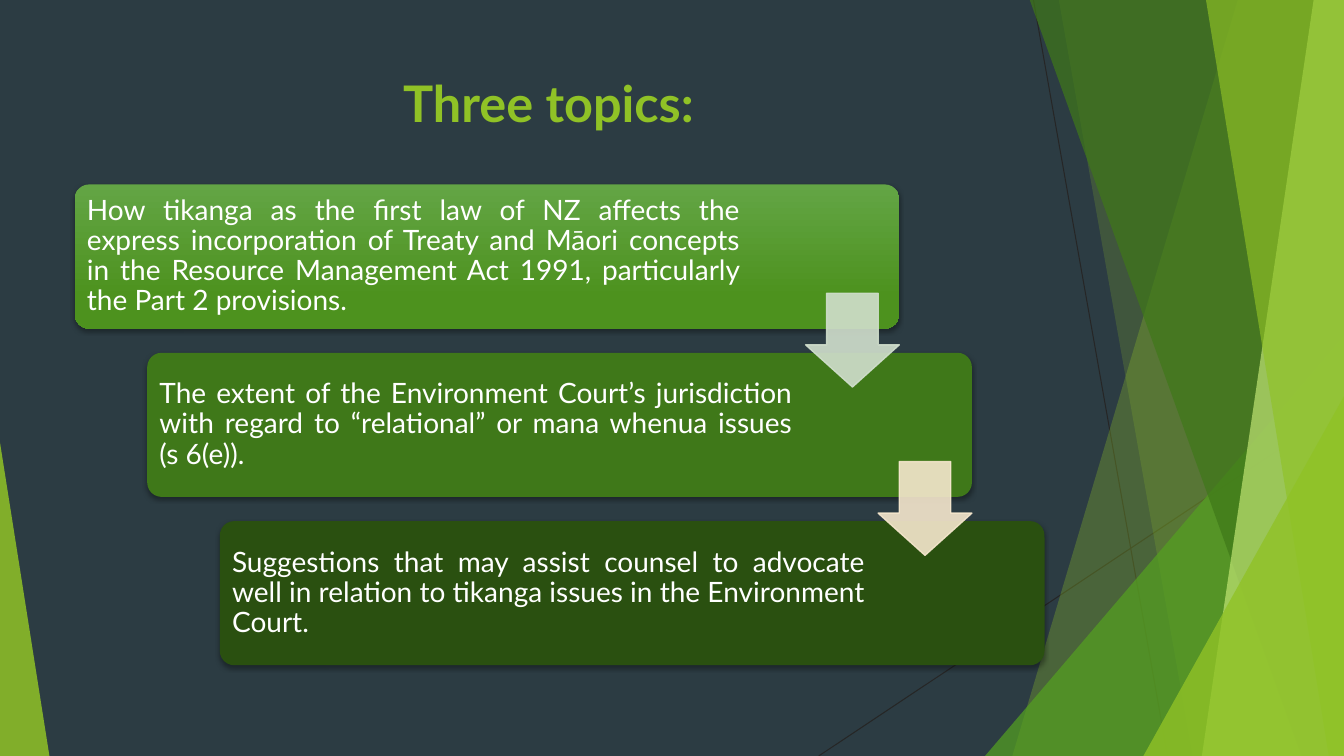
"""Builds the slide of three stepped topics."""
from dataclasses import dataclass

from lxml import etree
from pptx import Presentation
from pptx import util as u
from pptx.dml import color
from pptx.enum import shapes, text
from pptx.oxml import ns


@dataclass(frozen=True)
class Theme:
    """Colours, font and type sizes."""
    back: str = "2C3C43"
    ink: str = "FFFFFF"
    rule: str = "262626"
    lime: str = "90C226"
    pale: str = "C0E474"
    leaf: str = "54A021"
    moss: str = "3F7819"
    pine: str = "2A5010"
    glow: tuple = ("63A545", "4D921E")
    mint: str = "D1DFCD"
    sand: str = "F5E7CD"
    font: str = "Lato"
    head: int = 36
    body: int = 20


def rgb(code):
    """Return a colour from its hex code."""
    return color.RGBColor.from_string(code)


class Deck:
    """Holds the theme and the current slide."""

    def __init__(self, theme):
        """Open a title-only slide."""
        self.theme = theme
        self.prs = Presentation()
        self.wide, self.high = 13.33, 7.5
        self.prs.slide_width = u.Inches(self.wide)
        self.prs.slide_height = u.Inches(self.high)
        self.slide = self.prs.slides.add_slide(self.prs.slide_layouts[5])
        self.items = self.slide.shapes
        fill = self.slide.background.fill
        fill.solid()
        fill.fore_color.rgb = rgb(theme.back)

    def paint(self, shape, code, alpha=100):
        """Give a shape a flat, possibly clear fill and no line."""
        shape.shadow.inherit = False
        shape.fill.solid()
        shape.fill.fore_color.rgb = rgb(code)
        shape.line.fill.background()
        self.fade(shape, alpha)

    def fade(self, shape, alpha):
        """Set the opacity of every colour of a shape."""
        if alpha < 100:
            for node in shape.element.spPr.iter(ns.qn("a:srgbClr")):
                for old in node.findall(ns.qn("a:alpha")):
                    node.remove(old)
                etree.SubElement(node, ns.qn("a:alpha"), val=str(alpha * 1000))

    def shape(self, kind, box, adjust):
        """Add a preset shape with its adjustments."""
        shape = self.items.add_shape(kind, *map(u.Inches, box))
        for i, value in enumerate(adjust):
            shape.adjustments[i] = value
        return shape

    def line(self, *ends):
        """Add a thin straight line."""
        line = self.items.add_connector(
            shapes.MSO_CONNECTOR.STRAIGHT, *map(u.Inches, ends))
        line.line.color.rgb = rgb(self.theme.rule)
        line.line.width = u.Pt(0.75)
        etree.SubElement(line.element.spPr, ns.qn("a:effectLst"))

    def facet(self, top, foot, code, alpha):
        """Add a slanted panel that reaches the right edge."""
        rim = -0.01
        spots = [(self.wide, rim), (self.wide, self.high), (foot, self.high)]
        pen = self.items.build_freeform(u.Inches(top), u.Inches(rim), scale=1.0)
        pen.add_line_segments([(u.Inches(x), u.Inches(y)) for x, y in spots])
        self.paint(pen.convert_to_shape(), code, alpha)

    def wedge(self, left, top, wide, peak, code, alpha):
        """Add a triangle that stands on the lower edge."""
        box = left, top, wide, self.high - top
        shape = self.shape(shapes.MSO_SHAPE.ISOSCELES_TRIANGLE, box, [peak])
        self.paint(shape, code, alpha)

    def style(self, para, size, code, align, bold=False):
        """Format a paragraph and its runs."""
        para.alignment = align
        for run in para.runs:
            run.font.name = self.theme.font
            run.font.size = u.Pt(size)
            run.font.bold = bold
            run.font.color.rgb = rgb(code)

    def title(self, words, box):
        """Place and format the title."""
        head = self.items.title
        head.left, head.top, head.width, head.height = map(u.Inches, box)
        frame = head.text_frame
        frame.text = words
        frame.vertical_anchor = text.MSO_ANCHOR.TOP
        self.style(frame.paragraphs[0], self.theme.head, self.theme.lime,
                   text.PP_ALIGN.CENTER, True)

    def card(self, box, words, inset, fill):
        """Add a rounded card with a soft shadow and justified text."""
        card = self.shape(shapes.MSO_SHAPE.ROUNDED_RECTANGLE, box, [0.1])
        if isinstance(fill, tuple):
            self.paint(card, fill[0])
            card.fill.gradient()
            card.fill.gradient_angle = 270
            for stop, code, spot in zip(card.fill.gradient_stops, fill, (0, 0.78)):
                stop.color.rgb = rgb(code)
                stop.position = spot
        else:
            self.paint(card, fill)
        glow = etree.SubElement(
            card.element.spPr.find(ns.qn("a:effectLst")), ns.qn("a:outerShdw"),
            blurRad=str(u.Pt(3)), dist=str(u.Pt(2)), dir="5400000", rotWithShape="0")
        tint = etree.SubElement(glow, ns.qn("a:srgbClr"), val="000000")
        etree.SubElement(tint, ns.qn("a:alpha"), val="35000")
        frame = card.text_frame
        frame.word_wrap = True
        frame.vertical_anchor = text.MSO_ANCHOR.MIDDLE
        frame.margin_left = frame.margin_top = frame.margin_bottom = u.Inches(0.08)
        frame.margin_right = u.Inches(inset)
        frame.text = words
        para = frame.paragraphs[0]
        para.line_spacing = 0.9
        self.style(para, self.theme.body, self.theme.ink, text.PP_ALIGN.JUSTIFY)

    def arrow(self, left, top, code):
        """Add a clear down arrow."""
        box = left, top, 0.93, 0.93
        arrow = self.shape(shapes.MSO_SHAPE.DOWN_ARROW, box, [0.55, 0.45])
        arrow.adjustments[0], arrow.adjustments[1] = 0.55, 0.45
        self.paint(arrow, code)
        arrow.line.color.rgb = rgb(code)
        arrow.line.width = u.Pt(1)
        self.fade(arrow, 90)


def main():
    """Draw the slide and save it."""
    look = Theme()
    deck = Deck(look)
    deck.line(10.25, 0, 11.58, 7.5)
    deck.line(13.33, 4.03, 8.12, 7.5)
    deck.facet(12.28, 10.04, look.lime, 30)
    deck.facet(10.5, 11.83, look.lime, 20)
    deck.wedge(9.77, 3.33, 3.56, 1, look.leaf, 72)
    deck.facet(10.21, 12.91, look.moss, 70)
    deck.facet(13.03, 11.92, look.pale, 70)
    deck.facet(11.96, 13.18, look.lime, 65)
    deck.wedge(11.34, 3.93, 1.99, 1, look.lime, 80)
    deck.wedge(0, 4.39, 0.49, 0, look.lime, 85)
    deck.title("Three topics:", (0.74, 0.67, 9.4, 1.44))

    topics = [
        ("How tikanga as the first law of NZ affects the express incorporation "
         "of Treaty and Māori concepts in the Resource Management Act 1991, "
         "particularly the Part 2 provisions.", 1.54, look.glow),
        ("The extent of the Environment Court’s jurisdiction with regard to "
         "“relational” or mana whenua issues (s 6(e)).", 1.74, look.moss),
        ("Suggestions that may assist counsel to advocate well in relation to "
         "tikanga issues in the Environment Court.", 1.74, look.pine),
    ]
    left, top, across, down = 0.74, 1.83, 0.72, 1.67
    for i, (words, inset, fill) in enumerate(topics):
        box = left + i * across, top + i * down, 8.18, 1.43
        deck.card(box, words, inset, fill)
    for i, code in enumerate((look.mint, look.sand)):
        deck.arrow(7.99 + i * across, 2.91 + i * down, code)
    deck.prs.save("out.pptx")


if __name__ == "__main__":
    main()
